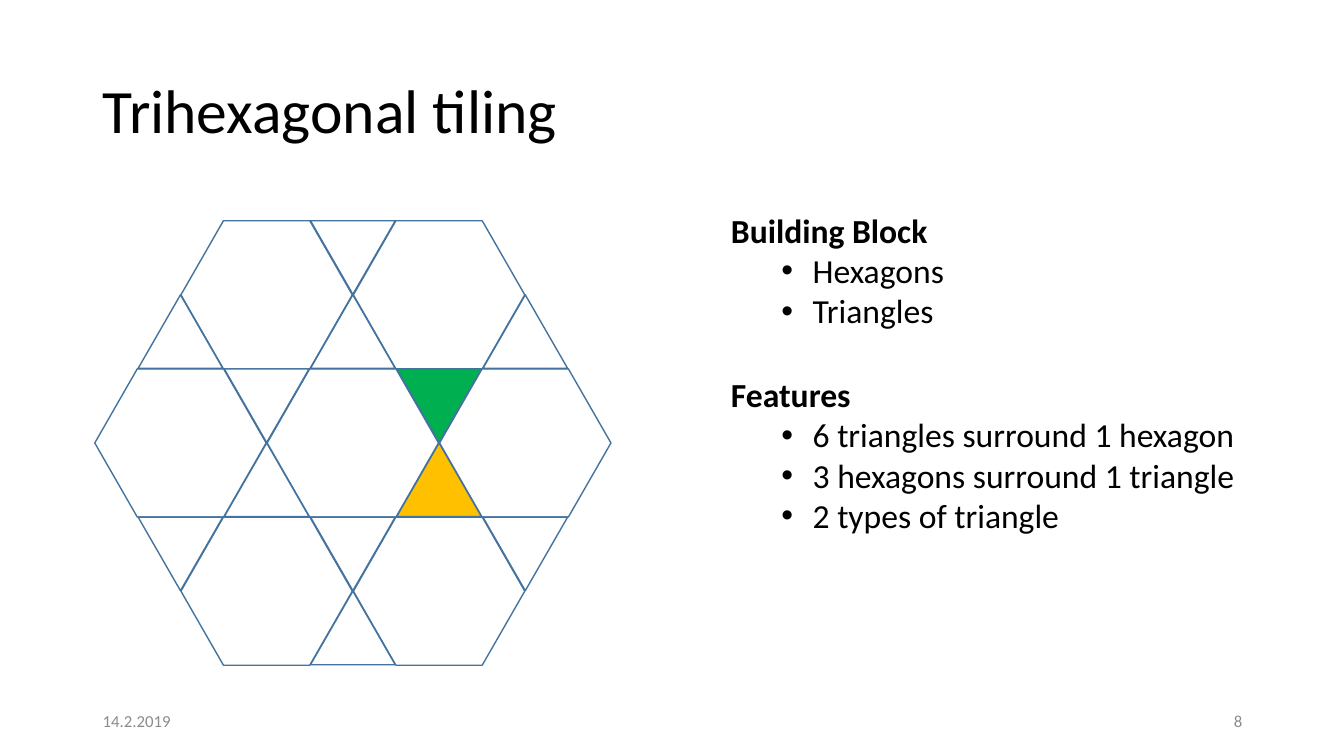
from lxml.etree import SubElement
from pptx import Presentation
from pptx.dml.color import RGBColor
from pptx.enum.shapes import MSO_SHAPE
from pptx.enum.text import MSO_ANCHOR, MSO_AUTO_SIZE, PP_ALIGN
from pptx.oxml.ns import qn
from pptx.util import Inches, Pt

BLACK = RGBColor(0x00, 0x00, 0x00)
WHITE = RGBColor(0xFF, 0xFF, 0xFF)
GRAY = RGBColor(0x8C, 0x8C, 0x8C)
EDGE = RGBColor(0x43, 0x73, 0x9E)
GREEN = RGBColor(0x00, 0xB0, 0x50)
AMBER = RGBColor(0xFF, 0xC0, 0x00)

CENTER_X, TILING_TOP = 3.5, 2.19
COLUMN_STEP, ROW_STEP = 0.855, 0.735
HEXAGON_SIZE = (1.7, 1.47)
TRIANGLE_SIZE = (0.84, 0.73)

HEXAGONS = [(-1, 0), (1, 0), (-2, 2), (0, 2), (2, 2), (-1, 4), (1, 4)]
UP_TRIANGLES = [(-2, 1), (0, 1), (2, 1), (-1, 3), (1, 3), (0, 5)]
DOWN_TRIANGLES = [(0, 0), (-1, 2), (1, 2), (-2, 4), (0, 4), (2, 4)]


class TilingSlide:
    """Holds the slide and its style, with a method for each kind of element."""

    font = "Calibri"

    def __init__(self, slide):
        self.slide = slide

    def run(self, paragraph, text, size, color=BLACK, bold=False):
        run = paragraph.add_run()
        run.text = text
        run.font.name = self.font
        run.font.size = Pt(size)
        run.font.bold = bold
        run.font.color.rgb = color

    def place(self, box, left, top, width, height):
        box.left, box.top = Inches(left), Inches(top)
        box.width, box.height = Inches(width), Inches(height)

    def title(self, text):
        heading = self.slide.shapes.title
        self.place(heading, 0.92, 0.4, 11.5, 1.45)
        heading.text_frame.vertical_anchor = MSO_ANCHOR.MIDDLE
        heading.text_frame.auto_size = MSO_AUTO_SIZE.NONE
        paragraph = heading.text_frame.paragraphs[0]
        paragraph.alignment = PP_ALIGN.LEFT
        paragraph.line_spacing = 0.9
        self.run(paragraph, text, 44)

    def bullet_list(self, index, place, heading, items):
        body = self.slide.placeholders[index]
        self.place(body, *place)
        frame = body.text_frame
        frame.auto_size = MSO_AUTO_SIZE.NONE
        frame.vertical_anchor = MSO_ANCHOR.TOP
        first = frame.paragraphs[0]
        first.space_before = Pt(0)
        self.run(first, heading, 24, bold=True)
        properties = first._p.get_or_add_pPr()
        properties.set("marL", "0")
        properties.set("indent", "0")
        SubElement(properties, qn("a:buNone"))
        for item in items:
            paragraph = frame.add_paragraph()
            paragraph.level = 1
            paragraph.space_before = Pt(0)
            self.run(paragraph, item, 24)
            properties = paragraph._p.get_or_add_pPr()
            properties.set("marL", str(Inches(0.81)))
            properties.set("indent", str(Inches(-0.31)))
            SubElement(properties, qn("a:buFont")).set("typeface", "Arial")
            SubElement(properties, qn("a:buChar")).set("char", "•")

    def footer(self, text, left, alignment):
        box = self.slide.shapes.add_textbox(
            Inches(left), Inches(6.95), Inches(3), Inches(0.4))
        box.text_frame.word_wrap = True
        box.text_frame.vertical_anchor = MSO_ANCHOR.MIDDLE
        paragraph = box.text_frame.paragraphs[0]
        paragraph.alignment = alignment
        self.run(paragraph, text, 12, GRAY)

    def tile(self, outline, size, column, row, fill):
        width, height = size
        left = CENTER_X + column * COLUMN_STEP - width / 2
        top = TILING_TOP + row * ROW_STEP
        tile = self.slide.shapes.add_shape(
            outline, Inches(left), Inches(top), Inches(width), Inches(height))
        tile.shadow.inherit = False
        tile.fill.solid()
        tile.fill.fore_color.rgb = fill
        tile.line.color.rgb = EDGE
        tile.line.width = Pt(1)
        return tile

    def hexagon(self, column, row):
        hexagon = self.tile(MSO_SHAPE.HEXAGON, HEXAGON_SIZE, column, row, WHITE)
        hexagon.adjustments[0] = 0.287

    def triangle(self, column, row, fill, rotation=0):
        triangle = self.tile(
            MSO_SHAPE.ISOSCELES_TRIANGLE, TRIANGLE_SIZE, column, row, fill)
        triangle.rotation = rotation


def main():
    presentation = Presentation()
    presentation.slide_width = Inches(13.33)
    presentation.slide_height = Inches(7.5)
    two_content = presentation.slide_layouts[3]
    page = TilingSlide(presentation.slides.add_slide(two_content))

    page.title("Trihexagonal tiling")
    page.bullet_list(1, (7.15, 2.03, 5.27, 1.31), "Building Block",
                     ["Hexagons", "Triangles"])
    page.bullet_list(2, (7.15, 3.66, 5.43, 1.72), "Features",
                     ["6 triangles surround 1 hexagon",
                      "3 hexagons surround 1 triangle",
                      "2 types of triangle"])

    for cell in HEXAGONS:
        page.hexagon(*cell)
    for cell in UP_TRIANGLES:
        page.triangle(*cell, AMBER if cell == (1, 3) else WHITE)
    for cell in DOWN_TRIANGLES:
        page.triangle(*cell, GREEN if cell == (1, 2) else WHITE, rotation=180)

    page.footer("14.2.2019", 0.92, PP_ALIGN.LEFT)
    page.footer("8", 9.42, PP_ALIGN.RIGHT)
    presentation.save("out.pptx")


if __name__ == "__main__":
    main()
